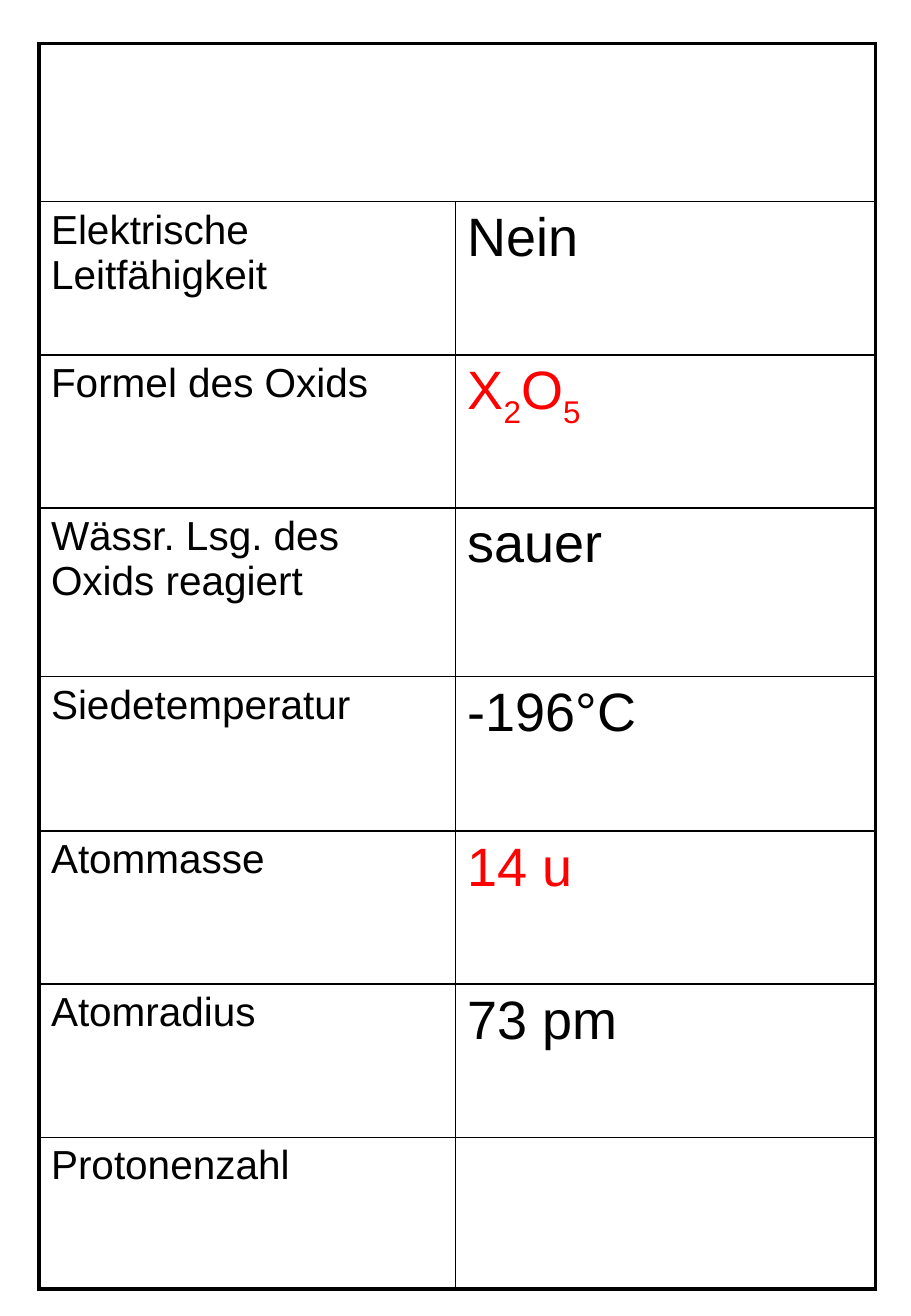
from lxml.etree import SubElement
from pptx import Presentation
from pptx.dml.color import RGBColor
from pptx.oxml.ns import qn
from pptx.util import Inches, Pt

BLACK = RGBColor(0, 0, 0)
RED = RGBColor(255, 0, 0)
FONT = "Arial"
WIDTH, HEIGHT = 7.5, 10.83
LEFT, TOP = 0.32, 0.36
COLUMNS = [3.43, 3.46]
ROWS = [1.3, 1.26, 1.26, 1.39, 1.27, 1.26, 1.26, 1.25]
THICK, THIN = 2.25, 1

PROPERTIES = [
    ("Elektrische Leitfähigkeit", ["Nein"], BLACK),
    ("Formel des Oxids", ["X", "2", "O", "5"], RED),
    ("Wässr. Lsg. des Oxids reagiert", ["sauer"], BLACK),
    ("Siedetemperatur", ["-196°C"], BLACK),
    ("Atommasse", ["14 u"], RED),
    ("Atomradius", ["73 pm"], BLACK),
    ("Protonenzahl", [], BLACK),
]


def add_text(p, text, size=24, color=BLACK, subscript=False):
    r = p.add_run()
    r.text = text
    r.font.name = FONT
    r.font.size = Pt(size)
    r.font.color.rgb = color
    if subscript:
        r._r.get_or_add_rPr().set("baseline", "-25000")


def set_borders(cell, **widths):
    tc_pr = cell._tc.get_or_add_tcPr()
    for side, width in widths.items():
        ln = SubElement(tc_pr, qn(f"a:ln{side}"), w=str(Pt(width)))
        fill = SubElement(ln, qn("a:solidFill"))
        SubElement(fill, qn("a:srgbClr"), val=str(BLACK))


def build_table(s):
    frame = s.shapes.add_table(
        len(ROWS), len(COLUMNS), Inches(LEFT), Inches(TOP),
        Inches(sum(COLUMNS)), Inches(sum(ROWS)))
    table = frame.table
    table.first_row = table.horz_banding = False
    for column, width in zip(table.columns, COLUMNS):
        column.width = Inches(width)
    for row, height in zip(table.rows, ROWS):
        row.height = Inches(height)

    last_row, last_col = len(ROWS) - 1, len(COLUMNS) - 1
    for i in range(len(ROWS)):
        for j in range(len(COLUMNS)):
            cell = table.cell(i, j)
            set_borders(
                cell,
                L=THICK if j == 0 else THIN,
                R=THICK if j == last_col or i == 0 else THIN,
                T=THICK if i == 0 else THIN,
                B=THICK if i == last_row else THIN)
            cell.fill.background()
    table.cell(0, 0).merge(table.cell(0, last_col))

    for i, (label, value, color) in enumerate(PROPERTIES, start=1):
        add_text(table.cell(i, 0).text_frame.paragraphs[0], label)
        p = table.cell(i, 1).text_frame.paragraphs[0]
        for part in value:
            add_text(p, part, size=32, color=color, subscript=part.isdigit())


def main():
    """Build the element property card and save it."""
    prs = Presentation()
    prs.slide_width, prs.slide_height = Inches(WIDTH), Inches(HEIGHT)
    s = prs.slides.add_slide(prs.slide_layouts[6])
    build_table(s)
    prs.save("out.pptx")


if __name__ == "__main__":
    main()
